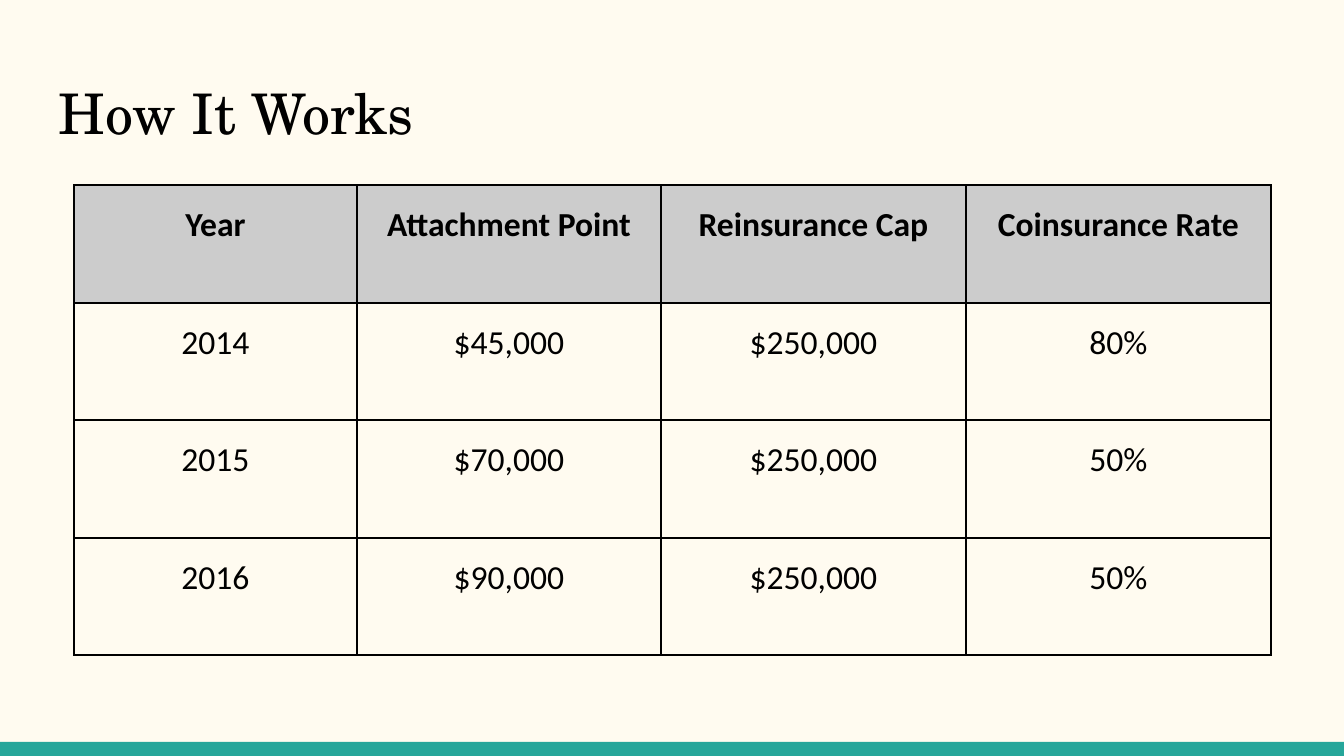
from lxml.etree import SubElement as Sub
from pptx import Presentation
from pptx.dml.color import RGBColor
from pptx.enum.shapes import MSO_SHAPE as Shape
from pptx.enum.text import MSO_ANCHOR as Anchor, PP_ALIGN as Align
from pptx.oxml.ns import qn
from pptx.util import Pt

PX = 9144000 / 1344
CREAM = RGBColor(0xFF, 0xFB, 0xF0)
TEAL = RGBColor(0x26, 0xA6, 0x9A)
GREY = RGBColor(0xCC, 0xCC, 0xCC)
BLACK = RGBColor(0x00, 0x00, 0x00)


def px(*nums):
    return [round(n * PX) for n in nums]


def write(par, text, font, size, bold=False):
    run = par.add_run()
    run.text = text
    run.font.name = font
    run.font.size = Pt(size)
    run.font.bold = bold
    run.font.color.rgb = BLACK


# Slide
deck = Presentation()
deck.slide_width, deck.slide_height = px(1344, 756)
slide = deck.slides.add_slide(deck.slide_layouts[6])
slide.background.fill.solid()
slide.background.fill.fore_color.rgb = CREAM
PAD = px(13)[0]

# Bottom bar
bar = slide.shapes.add_shape(Shape.RECTANGLE, *px(0, 742, 1344, 14))
bar.shadow.inherit = False
bar.fill.solid()
bar.fill.fore_color.rgb = TEAL
bar.line.fill.background()

# Title
frame = slide.shapes.add_textbox(*px(46, 66, 1252, 90)).text_frame
frame.word_wrap = True
frame.margin_left = frame.margin_right = PAD
frame.margin_top = frame.margin_bottom = PAD
write(frame.paragraphs[0], "How It Works", "TeX Gyre Schola", 30)

# Table
ROWS = [
    ["Year", "Attachment Point", "Reinsurance Cap", "Coinsurance Rate"],
    ["2014", "$45,000", "$250,000", "80%"],
    ["2015", "$70,000", "$250,000", "50%"],
    ["2016", "$90,000", "$250,000", "50%"],
]
WIDTHS = [283, 304, 305, 305]
HEIGHTS = [118, 117, 118, 117]
table = slide.shapes.add_table(
    len(ROWS), len(WIDTHS), *px(74, 185, sum(WIDTHS), sum(HEIGHTS))).table
table.horz_banding = False
for col, width in zip(table.columns, px(*WIDTHS)):
    col.width = width
for row, height in zip(table.rows, px(*HEIGHTS)):
    row.height = height

for r, texts in enumerate(ROWS):
    for c, text in enumerate(texts):
        cell = table.cell(r, c)
        cell.margin_left = cell.margin_right = PAD
        cell.margin_top = cell.margin_bottom = PAD
        cell.vertical_anchor = Anchor.TOP
        par = cell.text_frame.paragraphs[0]
        par.alignment = Align.CENTER
        par.line_spacing = 1.15
        write(par, text, "Calibri", 18, bold=r == 0)

        # Borders come before the fill in the cell's XML
        props = cell._tc.get_or_add_tcPr()
        for side in ("lnL", "lnR", "lnT", "lnB"):
            line = Sub(props, qn(f"a:{side}"), w=str(Pt(0.75)))
            fill = Sub(line, qn("a:solidFill"))
            Sub(fill, qn("a:srgbClr"), val=str(BLACK))
        if r == 0:
            cell.fill.solid()
            cell.fill.fore_color.rgb = GREY
        else:
            cell.fill.background()

deck.save("out.pptx")
